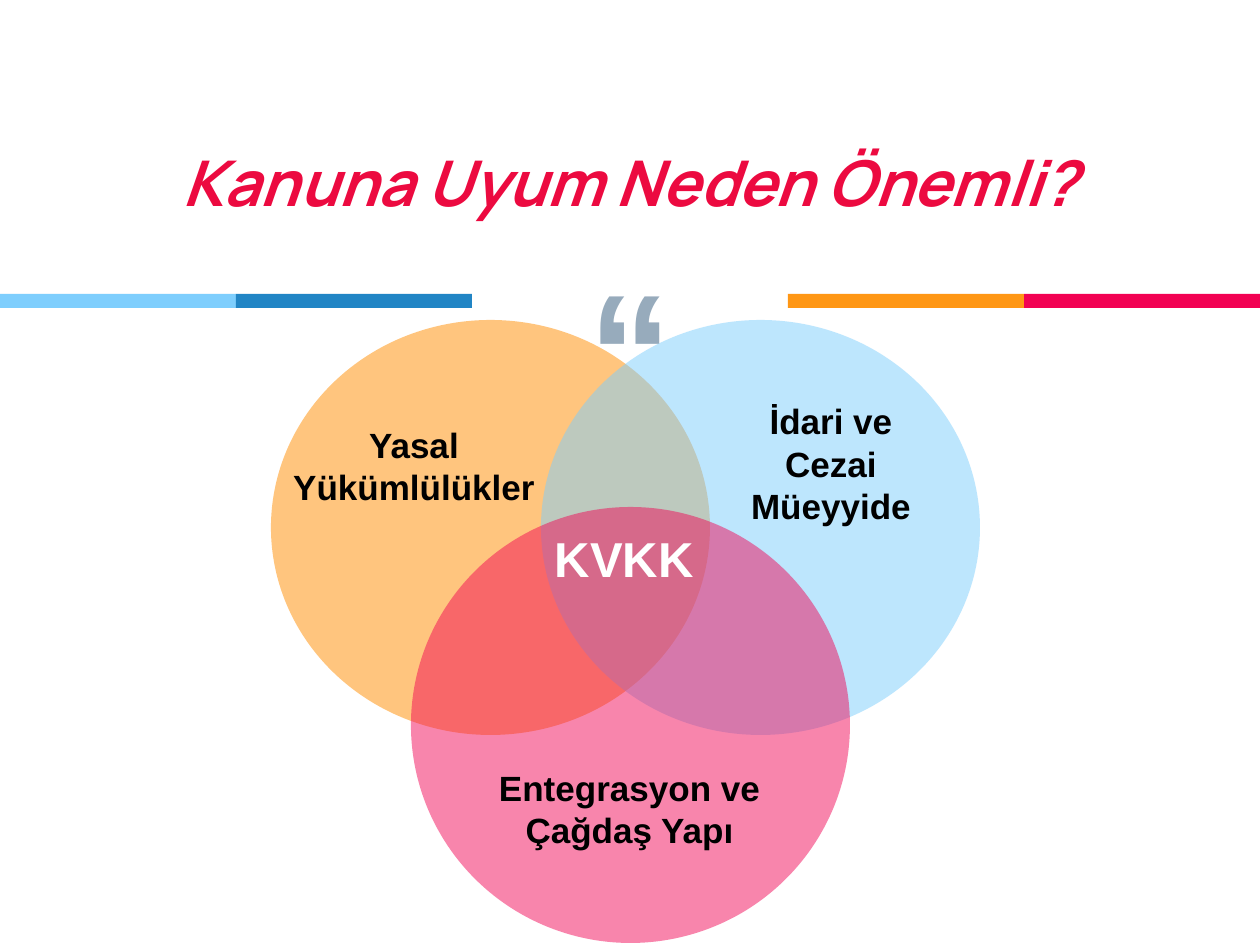
import pptx
import pptx.util
import pptx.dml.color
import pptx.enum.shapes
import pptx.enum.text
import pptx.oxml
import pptx.oxml.ns

PX = 914400 / 126
COLORS = {
    "sky": "7ECEFD", "blue": "2185C5", "orange": "FF9715", "pink": "F20253",
    "title": "EC0A40", "quote": "97ABBC", "black": "000000", "white": "FFFFFF",
}
ALIGN = pptx.enum.text.PP_ALIGN
ANCHOR = pptx.enum.text.MSO_ANCHOR
SHAPE = pptx.enum.shapes.MSO_SHAPE


def emu(*lengths):
    return [pptx.util.Emu(round(n * PX)) for n in lengths]


def rgb(name):
    return pptx.dml.color.RGBColor.from_string(COLORS[name])


def add_text(s, text, box, size=20, font="Arial", color="black", italic=False,
             align=ALIGN.CENTER, anchor=ANCHOR.TOP, insets=(13, 6, 13, 6)):
    tf = s.shapes.add_textbox(*emu(*box)).text_frame
    tf.word_wrap = True
    tf.vertical_anchor = anchor
    tf.margin_left, tf.margin_top, tf.margin_right, tf.margin_bottom = emu(*insets)
    p = tf.paragraphs[0]
    p.alignment = align
    r = p.add_run()
    r.text = text
    r.font.size = pptx.util.Pt(size)
    r.font.name = font
    r.font.bold = True
    r.font.italic = italic
    r.font.color.rgb = rgb(color)


def add_solid(s, kind, box, color, opacity=100):
    sp = s.shapes.add_shape(kind, *emu(*box))
    sp.shadow.inherit = False
    sp.fill.solid()
    sp.fill.fore_color.rgb = rgb(color)
    sp.line.fill.background()
    if opacity < 100:
        clr = sp._element.spPr.find(".//" + pptx.oxml.ns.qn("a:srgbClr"))
        alpha = pptx.oxml.parse_xml(
            f'<a:alpha {pptx.oxml.ns.nsdecls("a")} val="{opacity * 1000}"/>')
        clr.append(alpha)


def add_divider(s, x, y, w, h):
    """Quote mark between two pairs of coloured bars."""
    bar = 236
    add_text(s, "“", (x + 495, y - 77, 270, 120), size=96, color="quote",
             insets=(13, 28, 13, 13))
    starts = {"sky": 0, "blue": bar, "orange": w - 2 * bar, "pink": w - bar}
    for color, left in starts.items():
        add_solid(s, SHAPE.RECTANGLE, (x + left, y, bar, h), color)


def add_title(s, x, y, w, h):
    add_text(s, "Kanuna Uyum Neden Önemli?", (x, y, w, h), size=36, font="Manrope",
             color="title", italic=True, anchor=ANCHOR.BOTTOM, insets=(13, 13, 13, 13))


def add_venn(s, x, y):
    """Three overlapping circles with their labels."""
    circles = [
        (0, 0, 439, 415, "orange", 55),
        (270, 0, 439, 415, "sky", 51),
        (140, 187, 439, 436, "pink", 48),
    ]
    for left, top, w, h, color, opacity in circles:
        add_solid(s, SHAPE.OVAL, (x + left, y + top, w, h), color, opacity)

    add_text(s, "KVKK", (x + 271, y + 202, 186, 72), size=28, color="white",
             align=ALIGN.LEFT)
    labels = [
        ("Yasal Yükümlülükler", 5, 97, 276, 97),
        ("İdari ve Cezai Müeyyide", 446, 74, 228, 140),
        ("Entegrasyon ve Çağdaş Yapı", 205, 440, 307, 97),
    ]
    for text, left, top, w, h in labels:
        add_text(s, text, (x + left, y + top, w, h))


def main():
    prs = pptx.Presentation()
    prs.slide_width, prs.slide_height = emu(1260, 945)
    s = prs.slides.add_slide(prs.slide_layouts[6])
    add_divider(s, 0, 294, 1260, 14)
    add_title(s, 0, 74, 1260, 158)
    add_venn(s, 271, 320)
    prs.save("out.pptx")


if __name__ == "__main__":
    main()
